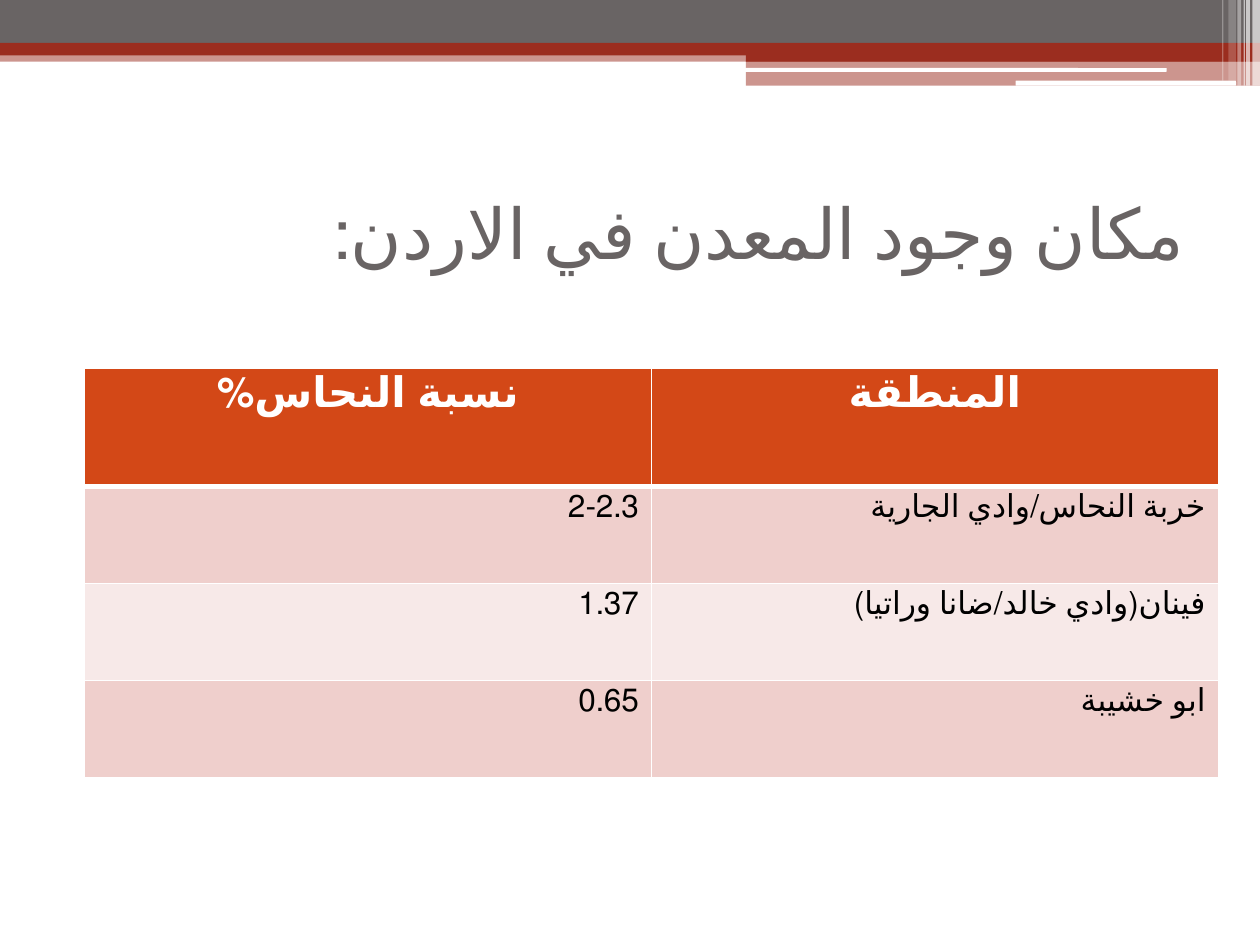
"""Build a slide with a table of copper shares by region in Jordan."""
from lxml.etree import SubElement
from pptx import Presentation
from pptx.dml.color import RGBColor
from pptx.enum.shapes import MSO_SHAPE
from pptx.enum.text import MSO_ANCHOR, PP_ALIGN
from pptx.oxml.ns import qn
from pptx.util import Inches, Pt

COLORS = {
    "red": "9B2D1F", "gray": "696464", "white": "FFFFFF", "black": "000000",
    "header": "D34817", "odd": "EFCFCC", "even": "F7E9E8",
}


def paint(fill, color, opacity=100):
    fill.solid()
    fill.fore_color.rgb = RGBColor.from_string(COLORS[color])
    if opacity < 100:
        tint = fill._xPr.find(qn("a:solidFill"))[0]
        SubElement(tint, qn("a:alpha"), val=str(opacity * 1000))


def write_rtl(frame, text, align, size, font, color, bold=False):
    paragraph = frame.paragraphs[0]
    paragraph.text = text
    paragraph.alignment = align
    paragraph._p.get_or_add_pPr().set("rtl", "1")
    paragraph.runs[0]._r.get_or_add_rPr().set("lang", "ar-JO")
    paragraph.font.size = Pt(size)
    paragraph.font.name = font
    paragraph.font.bold = bold
    paragraph.font.color.rgb = RGBColor.from_string(COLORS[color])


prs = Presentation()
prs.slide_width, prs.slide_height = Inches(10), Inches(7.5)
slide = prs.slides.add_slide(prs.slide_layouts[6])

RECT, ROUND = MSO_SHAPE.RECTANGLE, MSO_SHAPE.ROUNDED_RECTANGLE
bands = [
    (RECT, 0, 0.4, 10, 0.09, "red", 50),
    (RECT, 0, 0, 10, 0.34, "gray", 100),
    (RECT, 0, 0.34, 10, 0.1, "red", 100),
    (RECT, 5.92, 0.39, 4.08, 0.1, "red", 100),
    (RECT, 5.92, 0.48, 4.08, 0.2, "red", 50),
    (ROUND, 5.91, 0.54, 3.35, 0.03, "white", 100),
    (ROUND, 8.06, 0.64, 1.75, 0.04, "white", 100),
]
stripes = [
    (9.94, 0.06, 0.68, 65), (9.89, 0.03, 0.68, 65), (9.87, 0.01, 0.68, 60),
    (9.82, 0.03, 0.68, 40), (9.75, 0.06, 0.64, 20), (9.7, 0.01, 0.64, 30),
]
bands += [(RECT, left, 0, width, height, "white", opacity)
          for left, width, height, opacity in stripes]
for kind, left, top, width, height, color, opacity in bands:
    band = slide.shapes.add_shape(
        kind, Inches(left), Inches(top), Inches(width), Inches(height))
    band.shadow.inherit = False
    band.line.fill.background()
    paint(band.fill, color, opacity)

title = slide.shapes.add_textbox(
    Inches(0.5), Inches(1.25), Inches(9), Inches(1.17)).text_frame
title.word_wrap = True
title.vertical_anchor = MSO_ANCHOR.MIDDLE
write_rtl(title, "مكان وجود المعدن في الاردن:", PP_ALIGN.RIGHT, 40, "Lato", "gray")

regions = [
    ("نسبة النحاس%", "المنطقة"),
    ("2-2.3", "خربة النحاس/وادي الجارية"),
    ("1.37", "فينان(وادي خالد/ضانا وراتيا)"),
    ("0.65", "ابو خشيبة"),
]
table = slide.shapes.add_table(
    len(regions), 2, Inches(0.67), Inches(2.92), Inches(9), Inches(3.25)).table
for r, values in enumerate(regions):
    table.rows[r].height = Inches(0.77 if r else 0.94)
    for c, value in enumerate(values):
        cell = table.cell(r, c)
        properties = cell._tc.get_or_add_tcPr()
        for side in "LRTB":
            heavy = (r, side) in [(0, "B"), (1, "T")]
            border = SubElement(properties, qn(f"a:ln{side}"), w=str(Pt(3 if heavy else 1)))
            ink = SubElement(border, qn("a:solidFill"))
            SubElement(ink, qn("a:srgbClr"), val=COLORS["white"])
        if r == 0:
            paint(cell.fill, "header")
            write_rtl(cell.text_frame, value, PP_ALIGN.CENTER, 24,
                      "TeX Gyre Schola", "white", True)
        else:
            paint(cell.fill, "odd" if r % 2 else "even")
            write_rtl(cell.text_frame, value, PP_ALIGN.RIGHT, 18,
                      "TeX Gyre Schola", "black")

prs.save("out.pptx")
